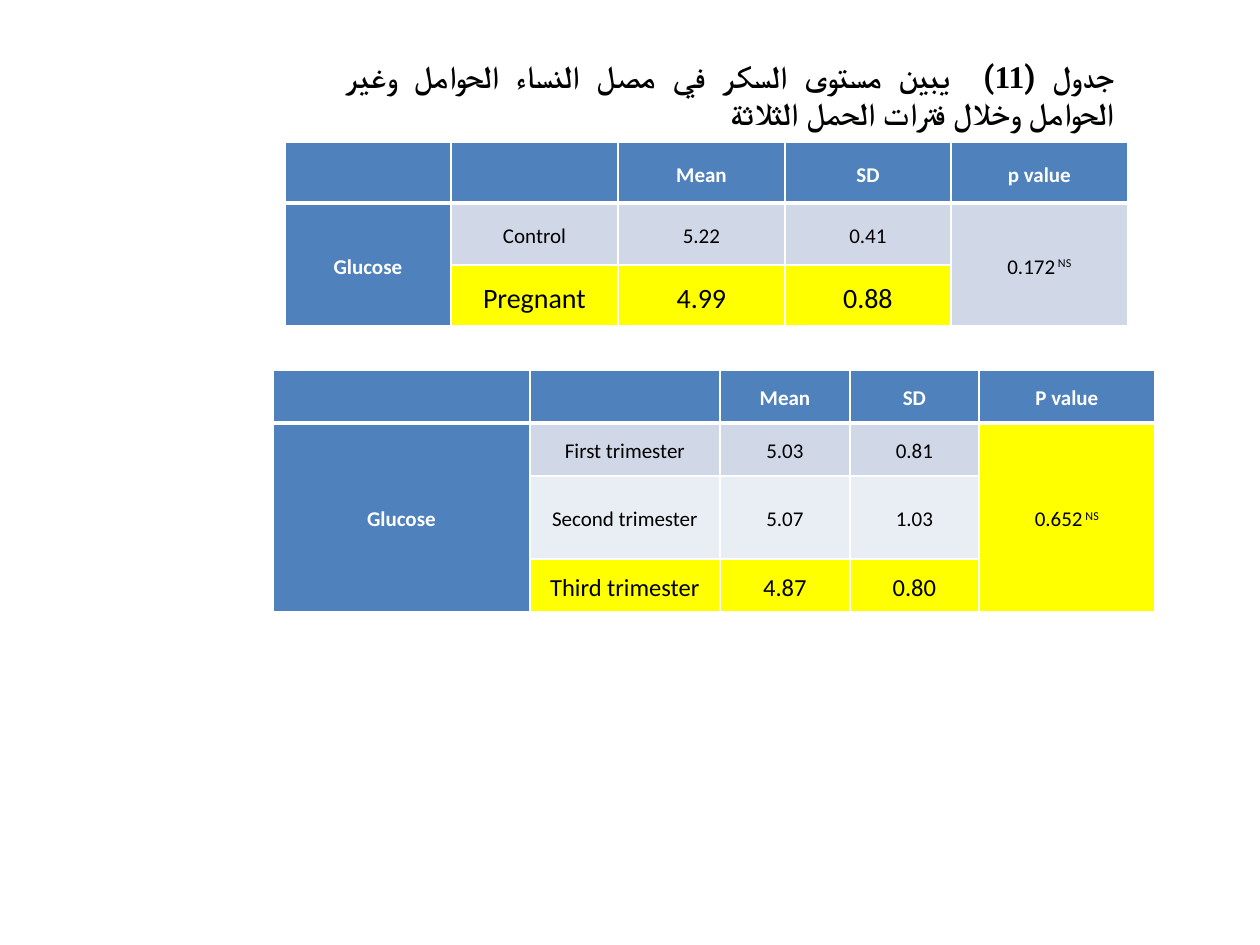
from dataclasses import dataclass
from itertools import product

from lxml import etree
from pptx import Presentation
from pptx.dml.color import RGBColor
from pptx.enum.text import MSO_ANCHOR, MSO_AUTO_SIZE, PP_ALIGN
from pptx.oxml.ns import qn
from pptx.slide import Slide
from pptx.util import Emu, Pt

MIDDLE = MSO_ANCHOR.MIDDLE
GROW = MSO_AUTO_SIZE.SHAPE_TO_FIT_TEXT
CENTER = PP_ALIGN.CENTER
JUSTIFY = PP_ALIGN.JUSTIFY_LOW
PX_PER_INCH = 126
COLORS = {
    "white": "FFFFFF",
    "black": "000000",
    "header": "4F81BD",
    "band": "D0D8E8",
    "light_band": "E9EDF4",
    "highlight": "FFFF00",
}


def px(length):
    return Emu(round(length * 914400 / PX_PER_INCH))


@dataclass
class SlideWriter:
    slide: Slide
    table_font: str = "Calibri"
    title_font: str = "Roboto"
    number_font: str = "Times New Roman"
    body_size: int = 12
    title_size: int = 18

    def format_run(self, run, font, size, color, bold):
        run.font.name = font
        run.font.size = Pt(size)
        run.font.bold = bold
        run.font.color.rgb = RGBColor.from_string(COLORS[color])

    def title(self, box, pieces):
        frame = self.slide.shapes.add_textbox(*map(px, box)).text_frame
        frame.word_wrap = True
        frame.auto_size = GROW
        frame.vertical_anchor = MIDDLE
        paragraph = frame.paragraphs[0]
        paragraph.alignment = JUSTIFY
        paragraph._p.get_or_add_pPr().set("rtl", "1")
        for piece in pieces:
            run = paragraph.add_run()
            run.text = piece
            font = self.number_font if piece.isdigit() else self.title_font
            self.format_run(run, font, self.title_size, "black", True)
            script_font = etree.SubElement(run._r.get_or_add_rPr(), qn("a:cs"))
            script_font.set("typeface", font)

    def borders(self, cell, row):
        widths = {"L": 1, "R": 1, "T": 3 if row == 1 else 1, "B": 3 if row == 0 else 1}
        properties = cell._tc.get_or_add_tcPr()
        for position, (side, width) in enumerate(widths.items()):
            line = etree.Element(qn(f"a:ln{side}"), w=str(Pt(width)))
            fill = etree.SubElement(line, qn("a:solidFill"))
            etree.SubElement(fill, qn("a:srgbClr"), val=COLORS["white"])
            properties.insert(position, line)

    def cell(self, cell, text, fill, margins, size, superscript=""):
        cell.fill.solid()
        cell.fill.fore_color.rgb = RGBColor.from_string(COLORS[fill])
        cell.vertical_anchor = MIDDLE
        cell.margin_left, cell.margin_top, cell.margin_right, cell.margin_bottom = map(px, margins)
        if not text:
            return
        is_header = fill == "header"
        paragraph = cell.text_frame.paragraphs[0]
        paragraph.text = text
        paragraph.alignment = CENTER
        paragraph.line_spacing = 1.15
        if superscript:
            raised = paragraph.add_run()
            raised.text = superscript
            raised._r.get_or_add_rPr().set("baseline", "30000")
        for run in paragraph.runs:
            color = "white" if is_header else "black"
            self.format_run(run, self.table_font, size, color, is_header)

    def table(self, left, top, widths, heights, margins, headings, groups, p_value, p_fill):
        last_row, last_column = len(heights) - 1, len(widths) - 1
        box = (left, top, sum(widths), sum(heights))
        table = self.slide.shapes.add_table(len(heights), len(widths), *map(px, box)).table
        table.horz_banding = False
        for column, width in zip(table.columns, widths):
            column.width = px(width)
        for row, height in zip(table.rows, heights):
            row.height = px(height)
        for column, heading in enumerate(headings):
            self.cell(table.cell(0, column), heading, "header", margins, self.body_size)
        for row, (values, fill, size) in enumerate(groups, start=1):
            for column, value in enumerate(values, start=1):
                self.cell(table.cell(row, column), value, fill, margins, size)
        for column in (0, last_column):
            table.cell(1, column).merge(table.cell(last_row, column))
        self.cell(table.cell(1, 0), "Glucose", "header", margins, self.body_size)
        self.cell(table.cell(1, last_column), p_value, p_fill, margins, self.body_size, " NS")
        for row, column in product(range(len(heights)), range(len(widths))):
            self.borders(table.cell(row, column), row)


def main():
    presentation = Presentation()
    presentation.slide_width = px(1260)
    presentation.slide_height = px(945)
    writer = SlideWriter(presentation.slides.add_slide(presentation.slide_layouts[6]))

    writer.table(
        285, 142, [166, 167, 167, 166, 177], [61, 62, 61], (1, 1, 1, 0),
        ["", "", "Mean", "SD", "p value"],
        [
            (("Control", "5.22", "0.41"), "band", 12),
            (("Pregnant", "4.99", "0.88"), "highlight", 16),
        ],
        "0.172", "band",
    )
    writer.title(
        (333, 50, 794, 89),
        ["جدول (", "11", ")  يبين مستوى السكر في مصل النساء الحوامل وغير الحوامل وخلال فترات الحمل الثلاثة"],
    )
    writer.table(
        273, 370, [257, 190, 130, 129, 176], [53, 53, 83, 53], (9, 0, 9, 0),
        ["", "", "Mean", "SD", "P value"],
        [
            (("First trimester", "5.03", "0.81"), "band", 12),
            (("Second trimester", "5.07", "1.03"), "light_band", 12),
            (("Third trimester", "4.87", "0.80"), "highlight", 14),
        ],
        "0.652", "highlight",
    )
    presentation.save("out.pptx")


if __name__ == "__main__":
    main()
